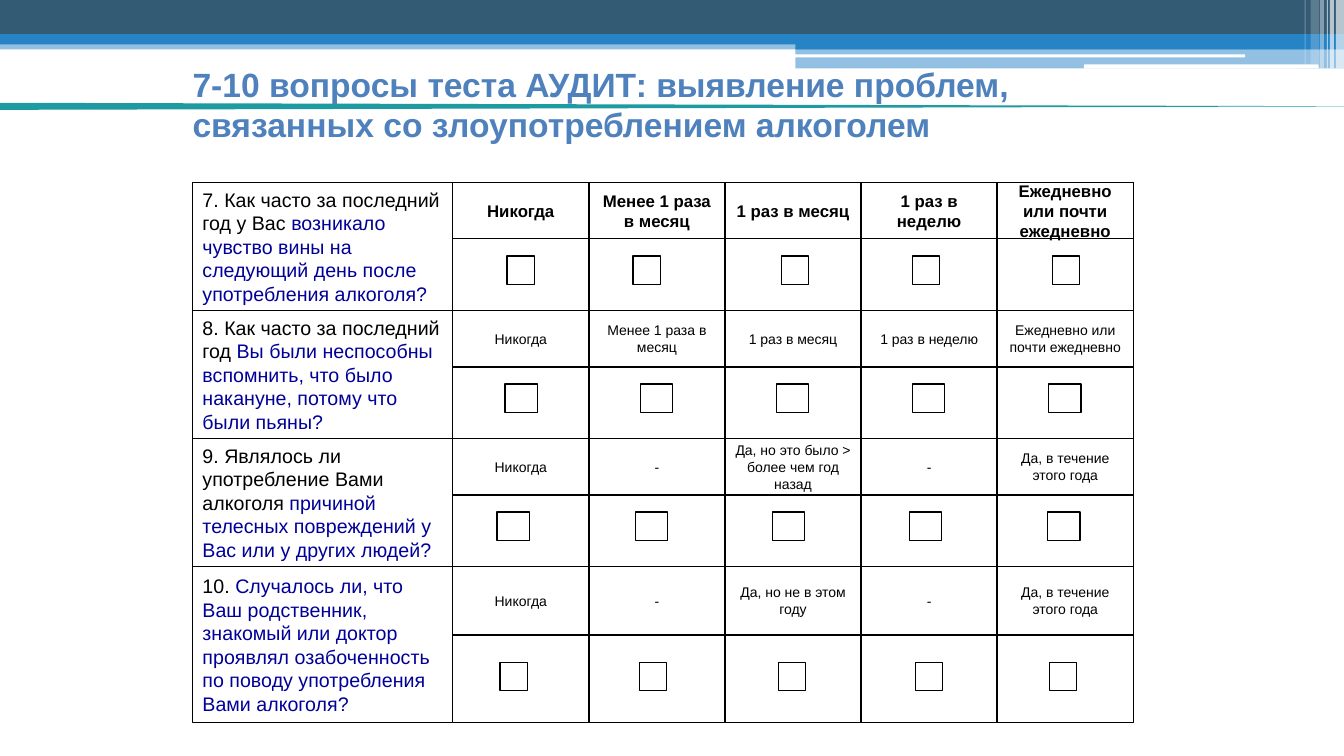
"""Build the slide with questions 7-10 of the AUDIT test."""
from lxml import etree
from pptx import Presentation
from pptx import util as u
from pptx.dml.color import RGBColor
from pptx.enum import shapes, text
from pptx.oxml import ns

BLACK = RGBColor(0x00, 0x00, 0x00)
WHITE = RGBColor(0xFF, 0xFF, 0xFF)
NAVY = RGBColor(0x00, 0x00, 0x99)
TITLE_BLUE = RGBColor(0x4F, 0x81, 0xBD)
SLATE = RGBColor(0x33, 0x5B, 0x74)
BLUE = RGBColor(0x26, 0x83, 0xC6)
TEAL = RGBColor(0x1D, 0x9B, 0xA1)

RECT = shapes.MSO_SHAPE.RECTANGLE
ROUND = shapes.MSO_SHAPE.ROUNDED_RECTANGLE
TRIANGLE = shapes.MSO_SHAPE.ISOSCELES_TRIANGLE

LEFT, QUESTION_W, ANSWER_W = 1.91, 2.58, 1.35
TITLE = "7-10 вопросы теста АУДИТ: выявление проблем, связанных со злоупотреблением алкоголем"

BANDS = [
    (RECT, 0, 0.4, 13.33, 0.09, BLUE, 50),
    (RECT, 0, 0, 13.33, 0.34, SLATE, 100),
    (RECT, 0, 0.34, 13.33, 0.1, BLUE, 100),
    (RECT, 7.89, 0.39, 5.44, 0.1, BLUE, 100),
    (RECT, 7.89, 0.48, 5.44, 0.2, BLUE, 50),
    (ROUND, 7.88, 0.54, 4.47, 0.03, WHITE, 100),
    (ROUND, 10.75, 0.64, 2.33, 0.04, WHITE, 100),
    (RECT, 13.25, 0, 0.08, 0.68, WHITE, 65),
    (RECT, 13.19, 0, 0.04, 0.68, WHITE, 65),
    (RECT, 13.16, 0, 0.01, 0.68, WHITE, 60),
    (RECT, 13.09, 0, 0.04, 0.68, WHITE, 40),
    (RECT, 13, 0, 0.08, 0.64, WHITE, 20),
    (RECT, 12.94, 0, 0.01, 0.64, WHITE, 30),
]

FREQUENCY = ["Никогда", "Менее 1 раза в месяц", "1 раз в месяц", "1 раз в неделю",
             "Ежедневно или почти ежедневно"]
HEADER_FONT = {"size": u.Pt(12), "bold": True}
ANSWER_FONT = {"size": u.Pt(10), "bold": False}

QUESTIONS = [
    {"lead": "7. Как часто за последний год у Вас ",
     "focus": "возникало чувство вины на следующий день после употребления алкоголя?",
     "answers": FREQUENCY, "font": HEADER_FONT,
     "top": 1.81, "height": 1.27, "answer_h": 0.56,
     "box_top": 2.54, "box_w": 0.27, "boxes": [5.03, 6.28, 7.75, 9.05, 10.44]},
    {"lead": "8. Как часто за последний год ",
     "focus": "Вы были неспособны вспомнить, что было накануне, потому что были пьяны?",
     "answers": FREQUENCY, "font": ANSWER_FONT,
     "top": 3.08, "height": 1.27, "answer_h": 0.56,
     "box_top": 3.81, "box_w": 0.32, "boxes": [5.01, 6.35, 7.7, 9.05, 10.4]},
    {"lead": "9. Являлось ли употребление Вами алкоголя ",
     "focus": "причиной телесных повреждений у Вас или у других людей?",
     "answers": ["Никогда", "-", "Да, но это было > более чем год назад", "-",
                 "Да, в течение этого года"],
     "font": ANSWER_FONT, "top": 4.35, "height": 1.27, "answer_h": 0.56,
     "box_top": 5.08, "box_w": 0.32, "boxes": [4.93, 6.3, 7.66, 9.02, 10.39]},
    {"lead": "10. ",
     "focus": "Случалось ли, что Ваш родственник, знакомый или доктор проявлял "
              "озабоченность по поводу употребления Вами алкоголя?",
     "answers": ["Никогда", "-", "Да, но не в этом году", "-", "Да, в течение этого года"],
     "font": ANSWER_FONT, "top": 5.62, "height": 1.55, "answer_h": 0.68,
     "box_top": 6.57, "box_w": 0.27, "boxes": [4.96, 6.34, 7.72, 9.08, 10.41]},
]


def set_attrs(target, values):
    for name, value in values.items():
        setattr(target, name, value)


def add_run(p, words, color, font):
    r = p.add_run()
    r.text = words
    set_attrs(r.font, {"name": "Arial", **font})
    r.font.color.rgb = color


def add_band(s, kind, x, y, w, h, color, opacity):
    sp = s.shapes.add_shape(kind, *map(u.Inches, (x, y, w, h)))
    sp.shadow.inherit = False
    sp.line.fill.background()
    sp.fill.solid()
    sp.fill.fore_color.rgb = color
    if opacity < 100:
        clr = sp.fill._xPr.find(ns.qn("a:solidFill"))[0]
        etree.SubElement(clr, ns.qn("a:alpha")).set("val", str(opacity * 1000))
    return sp


def add_frame(s, x, y, w, h, runs=(), align=text.PP_ALIGN.CENTER):
    sp = s.shapes.add_shape(RECT, *map(u.Inches, (x, y, w, h)))
    sp.shadow.inherit = False
    sp.fill.background()
    sp.line.color.rgb = BLACK
    sp.line.width = u.Pt(1)
    tf = sp.text_frame
    set_attrs(tf, {"word_wrap": True, "vertical_anchor": text.MSO_ANCHOR.MIDDLE})
    p = tf.paragraphs[0]
    p.alignment = align
    for words, color, font in runs:
        add_run(p, words, color, font)


def add_title(s):
    sp = s.shapes.title
    set_attrs(sp, {"left": u.Inches(LEFT), "top": u.Inches(0.6),
                   "width": u.Inches(9.59), "height": u.Inches(0.87)})
    tf = sp.text_frame
    set_attrs(tf, {"margin_left": 0, "margin_top": 0, "margin_right": 0, "margin_bottom": 0,
                   "word_wrap": True, "auto_size": text.MSO_AUTO_SIZE.NONE,
                   "vertical_anchor": text.MSO_ANCHOR.MIDDLE})
    p = tf.paragraphs[0]
    p.alignment = text.PP_ALIGN.LEFT
    add_run(p, TITLE, TITLE_BLUE, {"size": u.Pt(24), "bold": True})
    sp.element.getparent().append(sp.element)


def add_question(s, q):
    font = {"size": u.Pt(14)}
    add_frame(s, LEFT, q["top"], QUESTION_W, q["height"],
              [(q["lead"], BLACK, font), (q["focus"], NAVY, font)], text.PP_ALIGN.LEFT)
    for i, (answer, box_x) in enumerate(zip(q["answers"], q["boxes"])):
        x = LEFT + QUESTION_W + i * ANSWER_W
        add_frame(s, x, q["top"], ANSWER_W, q["height"])
        add_frame(s, x, q["top"], ANSWER_W, q["answer_h"], [(answer, BLACK, q["font"])])
        add_frame(s, box_x, q["box_top"], q["box_w"], 0.28)


def main():
    prs = Presentation()
    set_attrs(prs, {"slide_width": u.Inches(13.33), "slide_height": u.Inches(7.5)})
    s = prs.slides.add_slide(prs.slide_layouts[5])
    for band in BANDS:
        add_band(s, *band)
    needle = add_band(s, TRIANGLE, 6.85, -5.83, 0.07, 13.77, TEAL, 100)
    needle.rotation = 90
    add_title(s)
    for q in QUESTIONS:
        add_question(s, q)
    prs.save("out.pptx")


if __name__ == "__main__":
    main()
